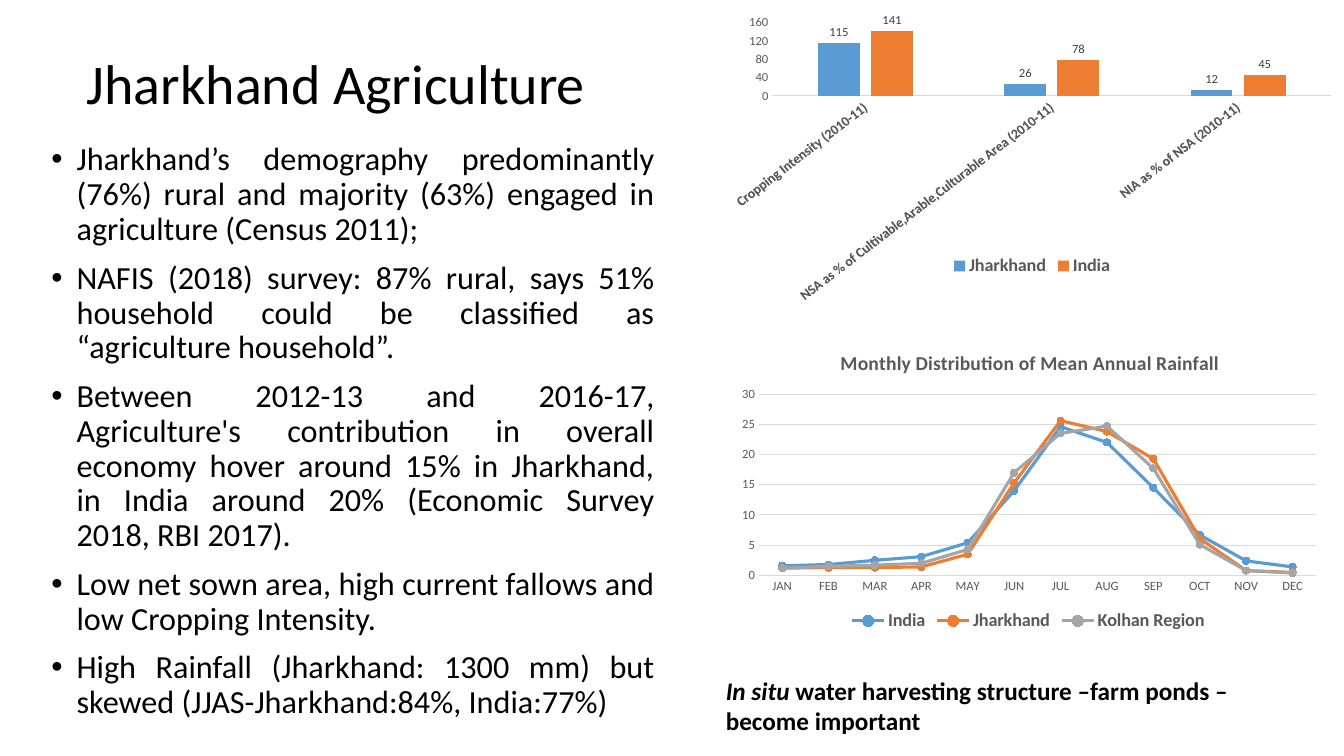
import pptx
import pptx.chart.data
import pptx.dml.color
import pptx.enum.chart
import pptx.enum.text
import pptx.oxml
import pptx.oxml.ns
import pptx.util
from pptx.util import Inches

FONT = "Calibri"
BLACK, GREY, DARK, RULE = "000000", "595959", "404040", "D9D9D9"
BLUE, ORANGE, SILVER = "5B9BD5", "ED7D31", "A5A5A5"

POINTS = [
    "Jharkhand’s demography predominantly (76%) rural and majority (63%) engaged in "
    "agriculture (Census 2011);",
    "NAFIS (2018) survey: 87% rural, says 51% household could be classified as "
    "“agriculture household”.",
    "Between 2012-13 and 2016-17, Agriculture's contribution in overall economy hover "
    "around 15% in Jharkhand, in India around 20% (Economic Survey 2018, RBI 2017).",
    "Low net sown area, high current fallows and low Cropping Intensity.",
    "High Rainfall (Jharkhand: 1300 mm) but skewed (JJAS-Jharkhand:84%, India:77%)",
]
LAND_MEASURES = [
    "Cropping Intensity (2010-11)",
    "NSA as % of Cultivable,Arable,Culturable Area (2010-11)",
    "NIA as % of NSA (2010-11)",
]
LAND_USE = [
    ("Jharkhand", BLUE, [115, 26, 12]),
    ("India", ORANGE, [141, 78, 45]),
]
MONTHS = "JAN FEB MAR APR MAY JUN JUL AUG SEP OCT NOV DEC".split()
RAINFALL = [
    ("India", BLUE, [1.6, 1.8, 2.5, 3.1, 5.4, 14, 24.6, 22, 14.5, 6.7, 2.4, 1.4]),
    ("Jharkhand", ORANGE, [1.2, 1.3, 1.3, 1.4, 3.5, 15.3, 25.6, 23.8, 19.3, 6.1, 0.8, 0.5]),
    ("Kolhan Region", SILVER, [1.2, 1.5, 1.7, 2, 4.3, 17, 23.5, 24.7, 17.7, 5.1, 0.8, 0.4]),
]


def rgb(color):
    return pptx.dml.color.RGBColor.from_string(color)


def style_font(font, size, color, bold=False):
    font.name = FONT
    font.size = pptx.util.Pt(size)
    font.bold = bold
    font.color.rgb = rgb(color)


def style_line(line, color, width):
    line.color.rgb = rgb(color)
    line.width = pptx.util.Pt(width)


def place(shape, box):
    shape.left, shape.top, shape.width, shape.height = (Inches(length) for length in box)


def fix_layout(chart, part, index, inner=False, **fractions):
    """Set a chart part's position as fractions of the chart area."""
    parent = chart.element.xpath(f"c:chart/c:{part}")[0]
    for old in parent.xpath("c:layout"):
        parent.remove(old)
    target = '<c:layoutTarget val="inner"/>' if inner else ""
    modes = '<c:xMode val="edge"/><c:yMode val="edge"/>'
    values = "".join(f'<c:{key} val="{value}"/>' for key, value in fractions.items())
    parent.insert(index, pptx.oxml.parse_xml(
        f'<c:layout {pptx.oxml.ns.nsdecls("c")}><c:manualLayout>'
        f"{target}{modes}{values}</c:manualLayout></c:layout>"))


def add_heading(slide, box):
    heading = slide.shapes.title
    place(heading, box)
    frame = heading.text_frame
    frame.text = "Jharkhand Agriculture"
    frame.auto_size = pptx.enum.text.MSO_AUTO_SIZE.NONE
    frame.vertical_anchor = pptx.enum.text.MSO_ANCHOR.MIDDLE
    paragraph = frame.paragraphs[0]
    paragraph.alignment = pptx.enum.text.PP_ALIGN.LEFT
    paragraph.line_spacing = 0.9
    style_font(paragraph.font, 40, BLACK)


def add_points(slide, box):
    body = slide.placeholders[1]
    place(body, box)
    frame = body.text_frame
    frame.text = "\n".join(POINTS)
    frame.auto_size = pptx.enum.text.MSO_AUTO_SIZE.NONE
    for paragraph in frame.paragraphs:
        paragraph.alignment = pptx.enum.text.PP_ALIGN.JUSTIFY
        paragraph.line_spacing = 0.9
        paragraph.space_before = pptx.util.Pt(10)
        style_font(paragraph.font, 23, BLACK)
        properties = paragraph._p.get_or_add_pPr()
        properties.set("marL", str(Inches(0.25)))
        properties.set("indent", str(Inches(-0.25)))


def add_chart(slide, box, kind, categories, rows, top_value, step):
    """Add a chart with the axes and legend both charts share."""
    data = pptx.chart.data.CategoryChartData(number_format="General")
    data.categories = categories
    for name, _, values in rows:
        data.add_series(name, values)
    chart = slide.shapes.add_chart(kind, *(Inches(length) for length in box), data).chart
    style_font(chart.font, 10, BLACK)
    chart.has_title = False

    chart.has_legend = True
    chart.legend.position = pptx.enum.chart.XL_LEGEND_POSITION.BOTTOM
    chart.legend.include_in_layout = False
    style_font(chart.legend.font, 13, GREY, bold=True)

    for axis in (chart.category_axis, chart.value_axis):
        axis.major_tick_mark = pptx.enum.chart.XL_TICK_MARK.NONE
        axis.minor_tick_mark = pptx.enum.chart.XL_TICK_MARK.NONE
        style_font(axis.tick_labels.font, 9, GREY)
    style_line(chart.category_axis.format.line, RULE, 0.75)
    scale = chart.value_axis
    scale.format.line.fill.background()
    scale.has_major_gridlines = False
    scale.minimum_scale, scale.maximum_scale, scale.major_unit = 0, top_value, step
    scale.tick_labels.number_format = "0"
    scale.tick_labels.number_format_is_linked = False
    chart.plots[0].vary_by_categories = False
    return chart


def add_land_use_chart(slide, box):
    chart = add_chart(slide, box, pptx.enum.chart.XL_CHART_TYPE.COLUMN_CLUSTERED,
                      LAND_MEASURES, LAND_USE, 160, 40)
    measures = chart.category_axis
    # Size and slant let the longest label fit above the chart's lower edge
    style_font(measures.tick_labels.font, 10, GREY, bold=True)
    measures._element.xpath("c:txPr/a:bodyPr")[0].set("rot", str(-38 * 60000))
    plot = chart.plots[0]
    plot.gap_width, plot.overlap = 219, -27
    for series, (_, color, _) in zip(plot.series, LAND_USE):
        series.format.fill.solid()
        series.format.fill.fore_color.rgb = rgb(color)
        labels = series.data_labels
        labels.show_value = True
        labels.number_format = "0"
        labels.number_format_is_linked = False
        labels.position = pptx.enum.chart.XL_LABEL_POSITION.OUTSIDE_END
        style_font(labels.font, 9, DARK)
    fix_layout(chart, "plotArea", 0, inner=True, x=0.09, y=0.01, w=0.89, h=0.24)
    fix_layout(chart, "legend", 1, x=0.37, y=0.76)


def add_rainfall_chart(slide, box):
    chart = add_chart(slide, box, pptx.enum.chart.XL_CHART_TYPE.LINE_MARKERS,
                      MONTHS, RAINFALL, 30, 5)
    chart.has_title = True
    caption = chart.chart_title.text_frame
    caption.text = "Monthly Distribution of Mean Annual Rainfall"
    style_font(caption.paragraphs[0].font, 14, GREY, bold=True)
    chart.value_axis.has_major_gridlines = True
    style_line(chart.value_axis.major_gridlines.format.line, RULE, 0.75)
    for series, (_, color, _) in zip(chart.plots[0].series, RAINFALL):
        series.smooth = False
        style_line(series.format.line, color, 2.25)
        marker = series.marker
        marker.style = pptx.enum.chart.XL_MARKER_STYLE.CIRCLE
        marker.size = 5
        marker.format.fill.solid()
        marker.format.fill.fore_color.rgb = rgb(color)
        style_line(marker.format.line, color, 0.75)
    fix_layout(chart, "title", 1, x=0.18, y=0.04)
    fix_layout(chart, "plotArea", 0, inner=True, x=0.05, y=0.2, w=0.93, h=0.6)


def add_conclusion(slide, box):
    frame = slide.shapes.add_textbox(*(Inches(length) for length in box)).text_frame
    frame.word_wrap = True
    frame.auto_size = pptx.enum.text.MSO_AUTO_SIZE.SHAPE_TO_FIT_TEXT
    paragraph = frame.paragraphs[0]
    style_font(paragraph.font, 18, BLACK, bold=True)
    latin = paragraph.add_run()
    latin.text = "In situ "
    latin.font.italic = True
    paragraph.add_run().text = "water harvesting structure –farm ponds – become important"


def main():
    deck = pptx.Presentation()
    deck.slide_width, deck.slide_height = Inches(13.33), Inches(7.5)
    slide = deck.slides.add_slide(deck.slide_layouts[1])
    add_heading(slide, (0.76, 0.13, 5.98, 1.45))
    add_points(slide, (0.41, 1.37, 6.19, 5.88))
    add_land_use_chart(slide, (7.1, 0.13, 6.23, 3.09))
    add_rainfall_chart(slide, (7.23, 3.31, 5.94, 3))
    add_conclusion(slide, (7.1, 6.65, 5.82, 0.71))
    deck.save("out.pptx")


if __name__ == "__main__":
    main()
